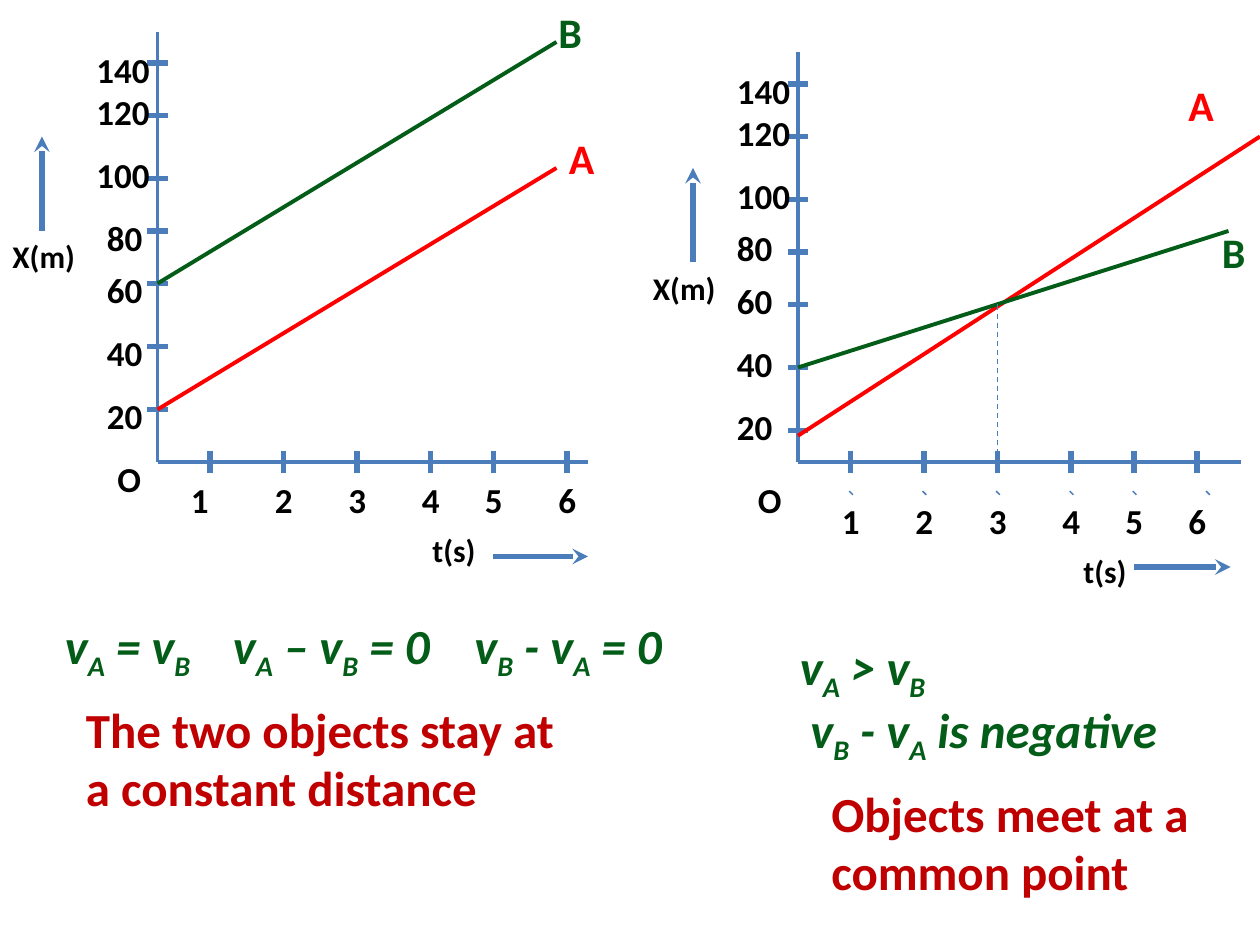
from dataclasses import dataclass

from lxml import etree
from pptx import Presentation
from pptx import util as u
from pptx.dml import color
from pptx.enum import dml, shapes
from pptx.oxml import ns


@dataclass(frozen=True)
class Theme:
    font: str = "Calibri"
    ink: str = "000000"
    axis: str = "4A7DBA"
    red: str = "FF0000"
    green: str = "035D18"
    wine: str = "C00000"
    unit: int = 18
    mark: int = 20
    name: int = 24
    big: int = 28
    thin: float = 0.75
    line: float = 2.25
    thick: float = 3


@dataclass(frozen=True)
class Box:
    left: float
    top: float

    def spot(self, x, y):
        return cell(self.left + x), cell(self.top + y)


T = Theme()
COLS, ROWS = 120, 90
WIDE, HIGH = u.Inches(10), u.Inches(7.5)

LEFT = dict(
    top=3, base=44, nums=[17, 25, 32, 39, 45, 52], end=56, last=54,
    rows=[37, 31, 25, 20, 14, 8, 4], shift=1, rise=(4, 22, 13),
    unit=(0, 22), time=(40, 50), run=(47, 56, 53),
    a=(15, 39, 53, 16), b=(15, 27, 53, 4), tag_a=(53, 12), tag_b=(52, 0))
RIGHT = dict(
    top=3, base=42, nums=[18, 25, 32, 39, 45, 51], end=57.2, last=53,
    rows=[36, 30, 24, 19, 14, 8, 4], shift=0, rise=(5, 23, 14),
    unit=(0, 23), time=(41, 50), run=(47, 56.2, 52),
    a=(15, 39.5, 59, 11), b=(15, 33, 56, 20), tag_a=(51, 5), tag_b=(54.2, 19))
TICKS = [39, 33, 27, 22, 17, 11, 6]
STEPS = [20, 27, 34, 41, 47]


def cell(n):
    return round(n * WIDE / COLS)


def write(page, box, at, words, wide=6, high=5.3, size=T.mark, hue=T.ink,
          slant=False, wrap=False):
    frame = page.shapes.add_textbox(*box.spot(*at), cell(wide), cell(high)).text_frame
    frame.word_wrap = wrap
    for i, row in enumerate(words.split("\n")):
        para = frame.paragraphs[0] if i == 0 else frame.add_paragraph()
        head, *rest = row.split("_")
        parts = [(head, False)]
        for bit in rest:
            parts += [(bit[0], True), (bit[1:], False)]
        for part, low in parts:
            if not part:
                continue
            run = para.add_run()
            run.text = part
            font = run.font
            font.name, font.size, font.bold = T.font, u.Pt(size), True
            font.italic = slant
            font.color.rgb = color.RGBColor.from_string(hue)
            if low:
                run._r.get_or_add_rPr().set("baseline", "-25000")


def draw(page, box, ends, hue=T.axis, width=T.thick, head=False, dash=False):
    x, y, far, down = ends
    link = page.shapes.add_connector(
        shapes.MSO_CONNECTOR.STRAIGHT, *box.spot(x, y), *box.spot(far, down))
    link.line.color.rgb = color.RGBColor.from_string(hue)
    link.line.width = u.Pt(width)
    if dash:
        link.line.dash_style = dml.MSO_LINE.DASH
    if head:
        tail = etree.SubElement(link.line._get_or_add_ln(), ns.qn("a:tailEnd"))
        tail.set("type", "stealth")
    etree.SubElement(link._element.spPr, ns.qn("a:effectLst"))


def graph(page, box, g):
    base = g["base"]
    draw(page, box, (15, g["top"], 15, base), width=T.line)
    draw(page, box, (g["end"], base, 15, base), width=T.line)
    write(page, box, (10, 43), "O", wide=4.7)
    for i, (tick, row) in enumerate(zip(TICKS, g["rows"])):
        draw(page, box, (14, tick, 16, tick))
        large = i > 3
        x = 8 if large else 8 + g["shift"]
        write(page, box, (x, row), str(20 * (i + 1)), wide=7.7 if large else 6)
    for i, (step, num) in enumerate(zip(STEPS + [g["last"]], g["nums"])):
        draw(page, box, (step, base + 1, step, base - 1))
        write(page, box, (num, 45), str(i + 1), wide=4.1)
    for key, hue in (("a", T.red), ("b", T.green)):
        draw(page, box, g[key], hue=hue, width=T.line)
        write(page, box, g["tag_" + key], key.upper(), wide=4.8, high=6,
              size=T.name, hue=hue)
    write(page, box, g["unit"], "X(m)", wide=8.5, high=4.9, size=T.unit)
    write(page, box, g["time"], "t(s)", wide=6.7, high=4.8, size=T.unit)
    x, low, top = g["rise"]
    draw(page, box, (x, low, x, top), head=True)
    x, far, y = g["run"]
    draw(page, box, (x, y, far, y), head=True)


def meet(page, box):
    draw(page, box, (34, 27, 34, 42.9), width=T.thin, dash=True)
    for x in STEPS + [54]:
        draw(page, box, (x, 45, x + 0.1, 44.9))


def notes(page, box, maths, claim, at, wide):
    for x, y, span, words in maths:
        write(page, box, (x, y), words, wide=span, high=6.9, size=T.big,
              hue=T.green, slant=True)
    write(page, box, at, claim, wide=wide, high=12.5, size=T.big,
          hue=T.wine, wrap=True)


def main():
    deck = Presentation()
    deck.slide_width, deck.slide_height = WIDE, HIGH
    page = deck.slides.add_slide(deck.slide_layouts[6])
    graph(page, Box(0, 0), LEFT)
    right = Box(61, 2)
    graph(page, right, RIGHT)
    meet(page, right)
    notes(page, Box(5, 58),
          [(0, 0, 15, "v_A = v_B"), (16, 0, 23, "v_A – v_B = 0"),
           (39, 0, 23, "v_B - v_A = 0")],
          "The two objects stay at a constant distance", (2, 8), 47)
    notes(page, Box(75, 60),
          [(0, 0, 15, "v_A > v_B"), (1, 6, 36.7, "v_B - v_A is negative")],
          "Objects meet at a\ncommon point", (3, 14), 37)
    deck.save("out.pptx")


if __name__ == "__main__":
    main()
